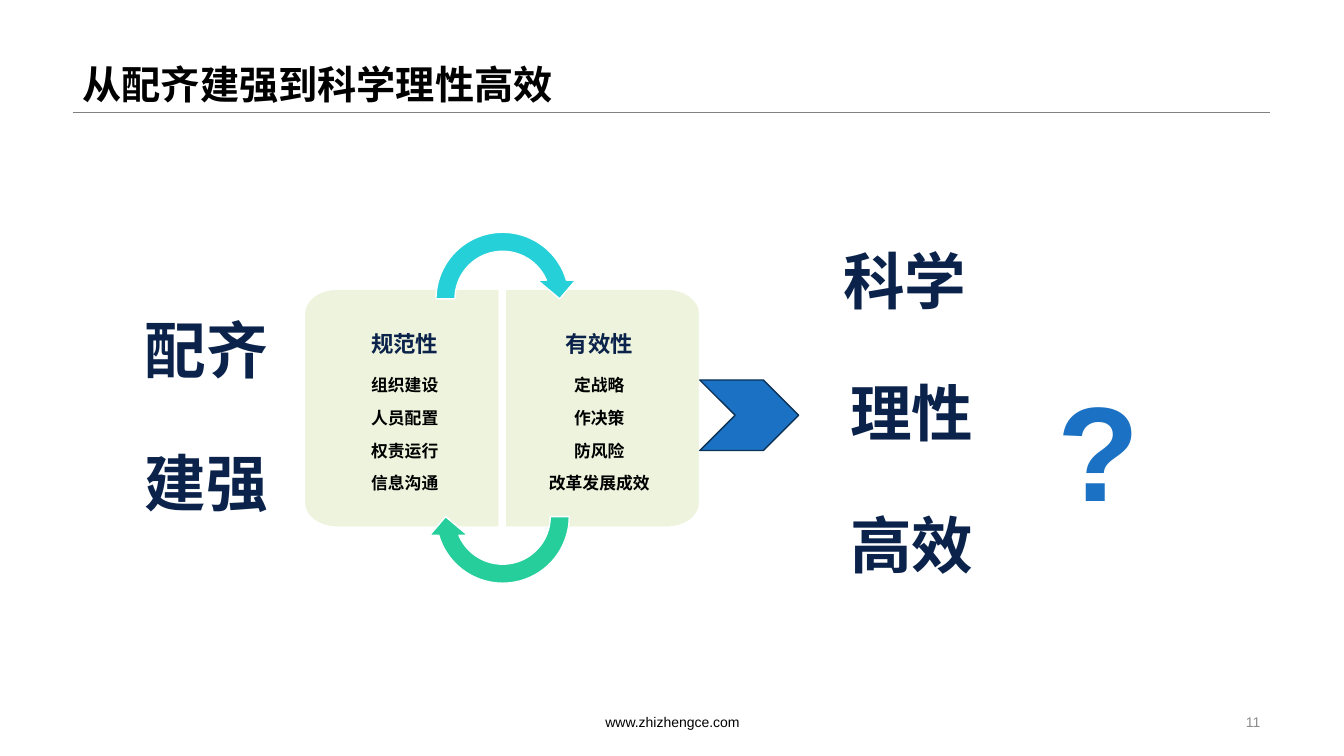
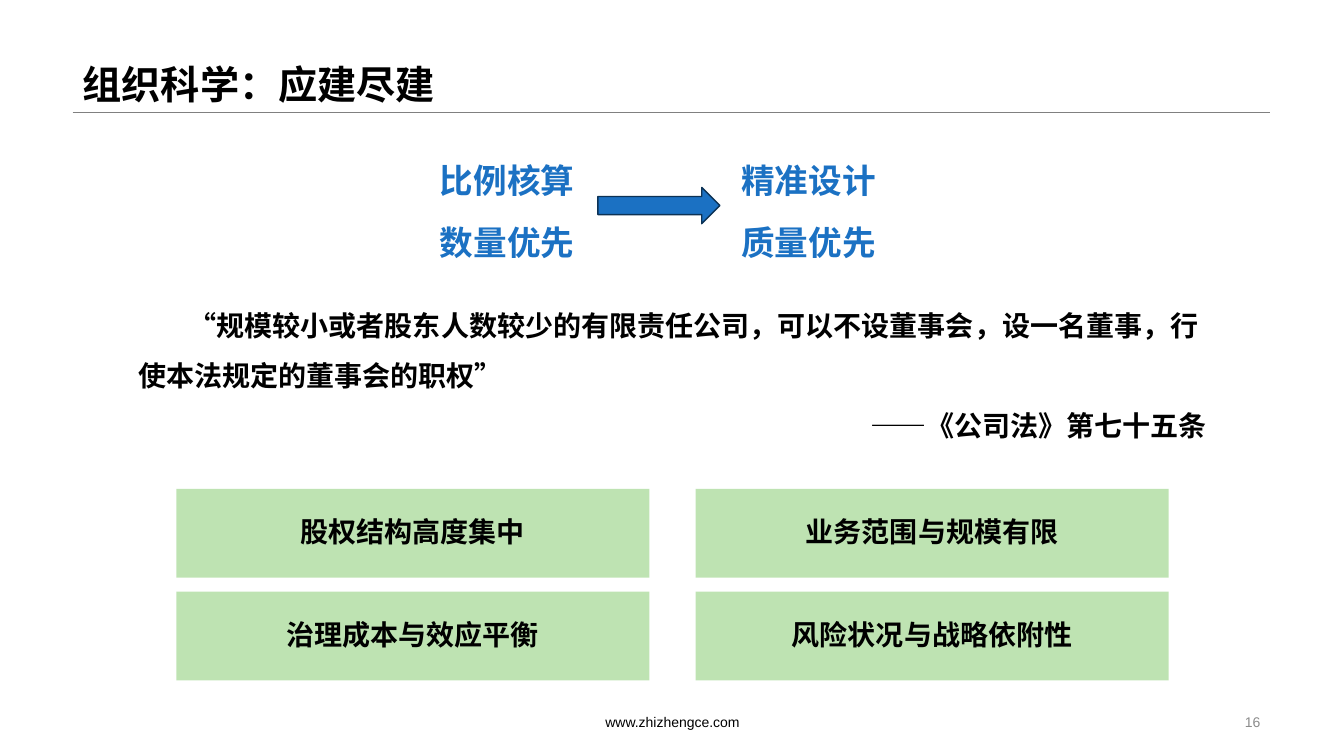
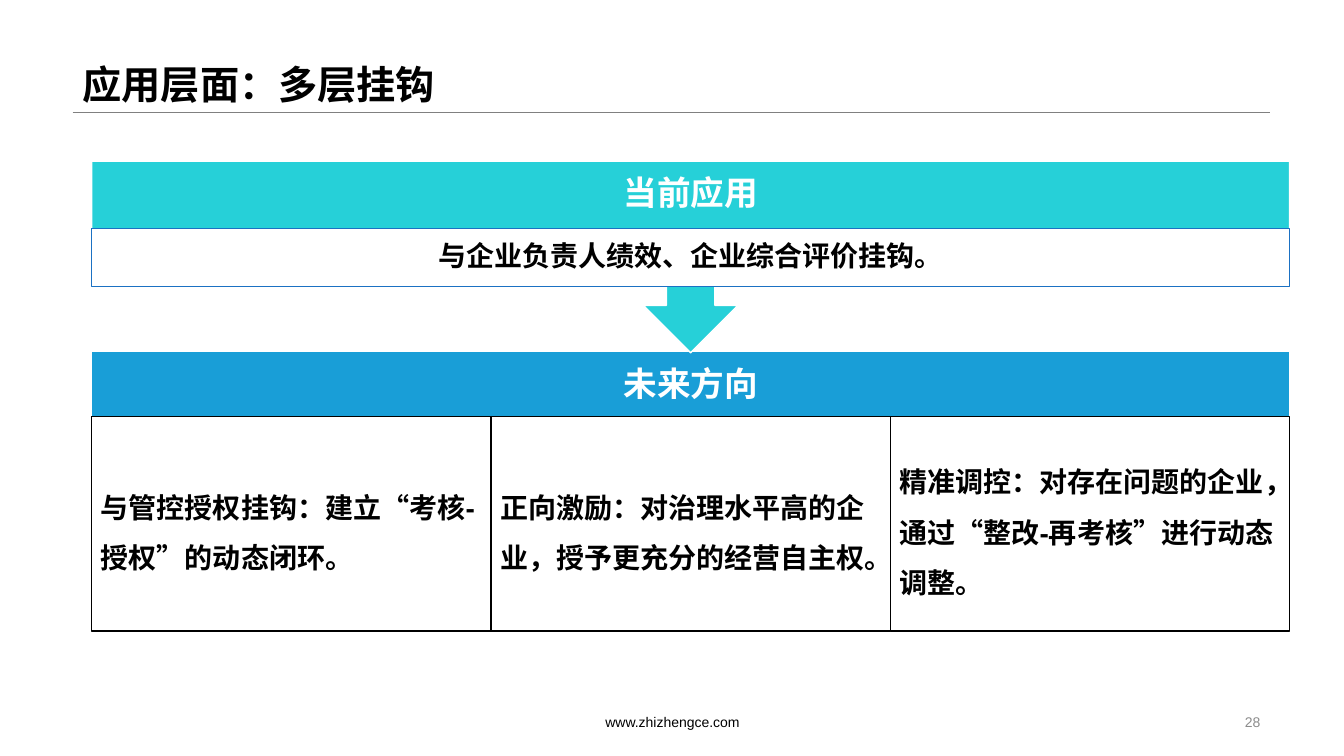
from dataclasses import dataclass, replace
from math import cos, pi, sin
from typing import Optional

from lxml import etree
from pptx import Presentation
from pptx import util as u
from pptx.dml import color
from pptx.enum import shapes, text
from pptx.oxml import ns

HUES = {
    "black": "000000", "white": "FFFFFF", "gray": "808080", "pale": "8C8C8C",
    "navy": "0B234B", "blue": "1B71C3", "edge": "0C3255", "cream": "EDF3DC",
    "cyan": "26D0D8", "mint": "26CE9C", "leaf": "7EC967", "sky": "199ED7",
}
KIND = shapes.MSO_SHAPE
TOP, MID, LOW = (text.MSO_ANCHOR.TOP, text.MSO_ANCHOR.MIDDLE,
                 text.MSO_ANCHOR.BOTTOM)
LEFT, MIDST, RIGHT = (text.PP_ALIGN.LEFT, text.PP_ALIGN.CENTER,
                      text.PP_ALIGN.RIGHT)
INSET = (0.1, 0.05, 0.1, 0.05)


@dataclass(frozen=True)
class Box:
    x: float
    y: float
    w: float
    h: float


@dataclass(frozen=True)
class Look:
    size: float
    hue: str = "black"
    bold: bool = True
    align: text.PP_ALIGN = MIDST
    lead: float = 1.0
    after: float = 0
    dent: float = 0
    face: str = "Arial"


@dataclass(frozen=True)
class Para:
    words: str
    look: Look


@dataclass(frozen=True)
class Panel:
    side: int
    x: float
    head: str
    items: tuple[str, ...]


TITLE = Look(28, align=LEFT, face="Noto Sans CJK SC")
FOOT = Look(10, bold=False)
NUMBER = Look(10, "pale", bold=False, align=RIGHT)
HUGE = Look(44, "navy", lead=1.5, after=15.4)
MARK = Look(96, "blue", lead=1.5)
HEAD = Look(16, "navy", lead=1.5, after=5.6)
ITEM = Look(12, lead=1.5, after=1.8)
PAIR = Look(24, "blue", lead=1.5, after=1)
QUOTE = Look(20, align=LEFT, lead=1.5, dent=0.5)
TILE = Look(20, lead=0.9, after=7)
BAND = Look(24, "white", lead=0.9, after=8.4)
CELL = Look(20, align=LEFT, lead=1.5, after=7)


def rgb(hue: str) -> color.RGBColor:
    return color.RGBColor.from_string(HUES[hue])


def place(shape, box: Box) -> None:
    shape.left, shape.top = u.Inches(box.x), u.Inches(box.y)
    shape.width, shape.height = u.Inches(box.w), u.Inches(box.h)


def write(shape, paras: list[Para], anchor=TOP, inset=INSET) -> None:
    frame = shape.text_frame
    frame.word_wrap = True
    frame.auto_size = text.MSO_AUTO_SIZE.NONE
    frame.vertical_anchor = anchor
    (frame.margin_left, frame.margin_top,
     frame.margin_right, frame.margin_bottom) = map(u.Inches, inset)
    for rank, para in enumerate(paras):
        line = frame.add_paragraph() if rank else frame.paragraphs[0]
        look = para.look
        line.text = para.words
        props = line._p.get_or_add_pPr()
        props.set("marL", "0")
        props.set("indent", str(u.Inches(look.dent)))
        etree.SubElement(props, ns.qn("a:buNone"))
        line.alignment = look.align
        line.line_spacing = look.lead
        line.space_before = u.Pt(0)
        line.space_after = u.Pt(look.after)
        font = line.font
        font.name, font.size, font.bold = look.face, u.Pt(look.size), look.bold
        font.color.rgb = rgb(look.hue)


def stack(look: Look, *lines: str) -> list[Para]:
    return [Para(line, look) for line in lines]


def label(slide, box: Box, paras: list[Para], anchor=TOP) -> None:
    shape = slide.shapes.add_textbox(0, 0, 0, 0)
    place(shape, box)
    write(shape, paras, anchor)


def paint(shape, fill: str, line: Optional[str]) -> None:
    shape.shadow.inherit = False
    shape.fill.solid()
    shape.fill.fore_color.rgb = rgb(fill)
    if line:
        shape.line.color.rgb = rgb(line)
        shape.line.width = u.Pt(1)
    else:
        shape.line.fill.background()


def form(slide, kind, box: Box, fill: str, line: Optional[str] = None):
    shape = slide.shapes.add_shape(kind, 0, 0, 0, 0)
    place(shape, box)
    paint(shape, fill, line)
    return shape


def poly(slide, dots: list[tuple[float, float]], fill: str, line: str):
    spots = [(u.Inches(x), u.Inches(y)) for x, y in dots]
    pen = slide.shapes.build_freeform(*spots[0])
    pen.add_line_segments(spots[1:], close=True)
    shape = pen.convert_to_shape()
    paint(shape, fill, line)
    return shape


def begin(deck, layout: int, title: str, number: int):
    slide = deck.slides.add_slide(deck.slide_layouts[layout])
    rule = slide.shapes.add_connector(
        shapes.MSO_CONNECTOR.STRAIGHT, u.Inches(0.72), u.Inches(1.12),
        u.Inches(12.6), u.Inches(1.12))
    rule.line.color.rgb = rgb("gray")
    rule.line.width = u.Pt(0.75)
    etree.SubElement(rule._element.spPr, ns.qn("a:effectLst"))
    place(slide.shapes.title, Box(0.72, 0.14, 11.88, 0.98))
    write(slide.shapes.title, stack(TITLE, title), LOW)
    label(slide, Box(4.85, 7.03, 3.64, 0.27), stack(FOOT, "www.zhizhengce.com"))
    label(slide, Box(8.5, 7.01, 4.1, 0.3), stack(NUMBER, str(number)), MID)
    return slide


def body(slide, index: int, box: Box, paras: list[Para]) -> None:
    shape = slide.placeholders[index]
    place(shape, box)
    write(shape, paras)


def panel(slide, part: Panel) -> None:
    wide, top, base, rx, ry = 1.93, 2.87, 5.23, 0.32, 0.24
    inner = part.x + wide if part.side < 0 else part.x
    outer = inner + part.side * wide
    turns = [step * pi / 16 for step in range(9)]
    hub = outer - part.side * rx
    upper = [(hub + part.side * rx * sin(t), top + ry - ry * cos(t))
             for t in turns]
    lower = [(x, top + base - y) for x, y in reversed(upper)]
    shape = poly(slide, [(inner, top), *upper, *lower, (inner, base)],
                 "cream", "white")
    sides = (0.21, 0.15) if part.side < 0 else (0.15, 0.21)
    write(shape, stack(HEAD, part.head) + stack(ITEM, *part.items),
          TOP, (sides[0], 0.27, sides[1], 0.27))


def goals(deck) -> None:
    slide = begin(deck, 3, "从配齐建强到科学理性高效", 11)
    for part in (
        Panel(-1, 3.02, "规范性", ("组织建设", "人员配置", "权责运行", "信息沟通")),
        Panel(1, 5.01, "有效性", ("定战略", "作决策", "防风险", "改革发展成效")),
    ):
        panel(slide, part)
    for y, hue, turn in ((2.21, "cyan", 0), (4.37, "mint", 180)):
        arc = form(slide, KIND.CIRCULAR_ARROW, Box(4.23, y, 1.51, 1.51),
                   hue, "white")
        arc.rotation = turn
    form(slide, KIND.CHEVRON, Box(6.94, 3.77, 0.98, 0.7), "blue", "edge")
    body(slide, 1, Box(0.6, 2.68, 2.89, 2.45), stack(HUGE, "配齐", "建强"))
    body(slide, 2, Box(7.6, 1.99, 2.89, 3.82),
         stack(HUGE, "科学 ", "理性", "高效"))
    label(slide, Box(9.78, 2.79, 2.23, 2.23), stack(MARK, "?"))


def setup(deck) -> None:
    slide = begin(deck, 1, "组织科学：应建尽建", 16)
    for mid, lines in ((5.03, ("比例核算", "数量优先")),
                       (8.02, ("精准设计", "质量优先"))):
        label(slide, Box(mid - 0.9, 1.34, 1.8, 1.24), stack(PAIR, *lines))
    form(slide, KIND.RIGHT_ARROW, Box(5.93, 1.86, 1.21, 0.36), "blue", "edge")
    body(slide, 1, Box(1.27, 2.84, 10.8, 1.56), [
        Para("“规模较小或者股东人数较少的有限责任公司，可以不设董事会，"
             "设一名董事，行使本法规定的董事会的职权”", QUOTE),
        Para("——《公司法》第七十五条", replace(QUOTE, align=RIGHT)),
    ])
    tiles = ("股权结构高度集中", "业务范围与规模有限",
             "治理成本与效应平衡", "风险状况与战略依附性")
    for rank, words in enumerate(tiles):
        row, col = divmod(rank, 2)
        tile = form(slide, KIND.RECTANGLE,
                    Box(1.75 + col * 5.15, 4.85 + row * 1.02, 4.69, 0.88),
                    "leaf")
        tint = tile._element.spPr.find(".//" + ns.qn("a:srgbClr"))
        etree.SubElement(tint, ns.qn("a:alpha"), val="50000")
        write(tile, stack(TILE, words), MID, (0.1,) * 4)


def uses(deck) -> None:
    slide = begin(deck, 5, "应用层面：多层挂钩", 28)
    slim = (0.09, 0.02, 0.09, 0.02)
    left, wide = 0.91, 11.88
    right, mid = left + wide, left + wide / 2
    plan = form(slide, KIND.RECTANGLE, Box(left, 3.49, wide, 1.24),
                "sky", "white")
    write(plan, stack(BAND, "未来方向"), MID, (0.13, 0.13, 0.13, 0.7))
    cells = ("与管控授权挂钩：建立“考核-授权”的动态闭环。",
             "正向激励：对治理水平高的企业，授予更充分的经营自主权。",
             "精准调控：对存在问题的企业，通过“整改-再考核”进行动态调整。")
    span = wide / len(cells)
    for rank, words in enumerate(cells):
        cell = form(slide, KIND.RECTANGLE,
                    Box(left + rank * span, 4.13, span, 2.13),
                    "white", "black")
        write(cell, stack(CELL, words), MID, slim)
    half = [(0.24, 2.84), (0.24, 3.03), (0.47, 3.03)]
    dots = [(right, 1.6), (right, 2.84)]
    dots += [(mid + x, y) for x, y in half] + [(mid, 3.5)]
    dots += [(mid - x, y) for x, y in reversed(half)]
    dots += [(left, 2.84), (left, 1.6)]
    now = poly(slide, dots, "cyan", "white")
    write(now, stack(BAND, "当前应用"), MID, (0.13, 0.13, 0.13, 1.37))
    note = form(slide, KIND.RECTANGLE, Box(left, 2.27, wide, 0.57),
                "white", "blue")
    write(note, stack(TILE, "与企业负责人绩效、企业综合评价挂钩。"), MID, slim)


def main() -> None:
    deck = Presentation()
    deck.slide_width, deck.slide_height = u.Inches(13.33), u.Inches(7.5)
    for build in (goals, setup, uses):
        build(deck)
    deck.save("out.pptx")


if __name__ == "__main__":
    main()
